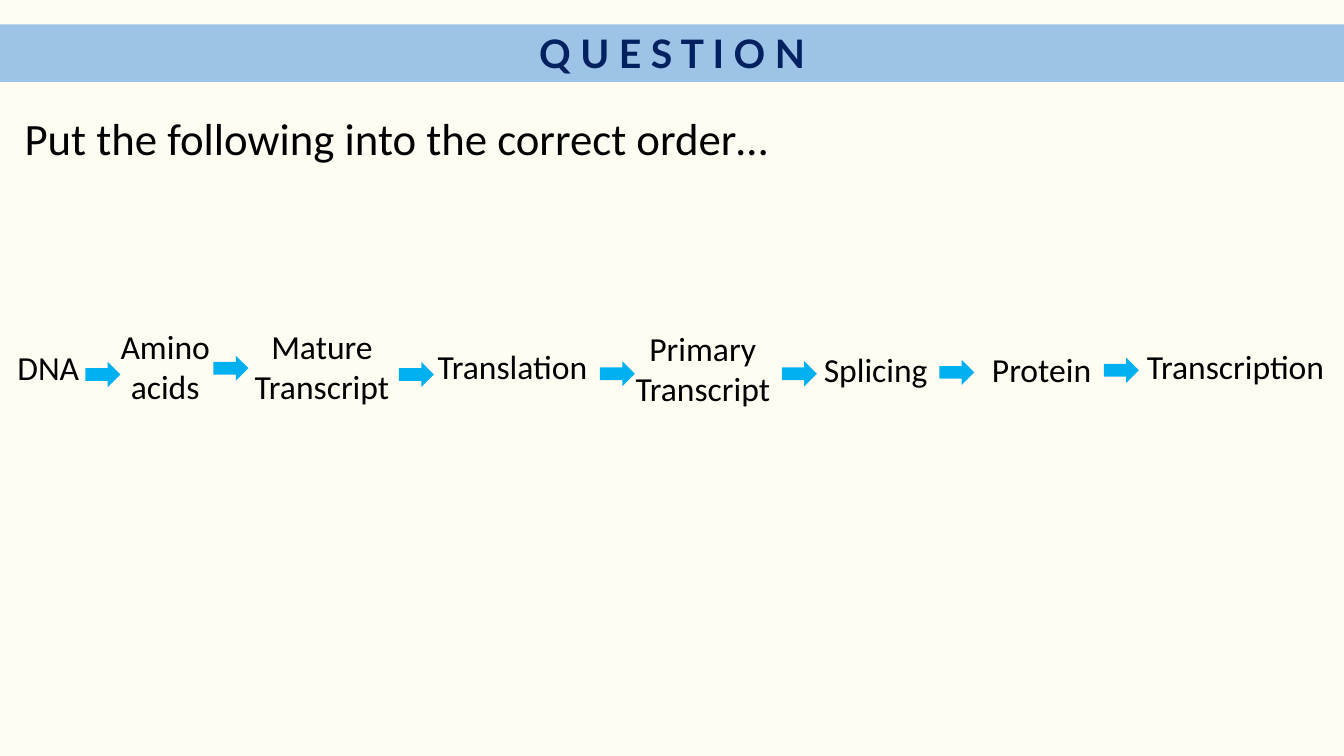
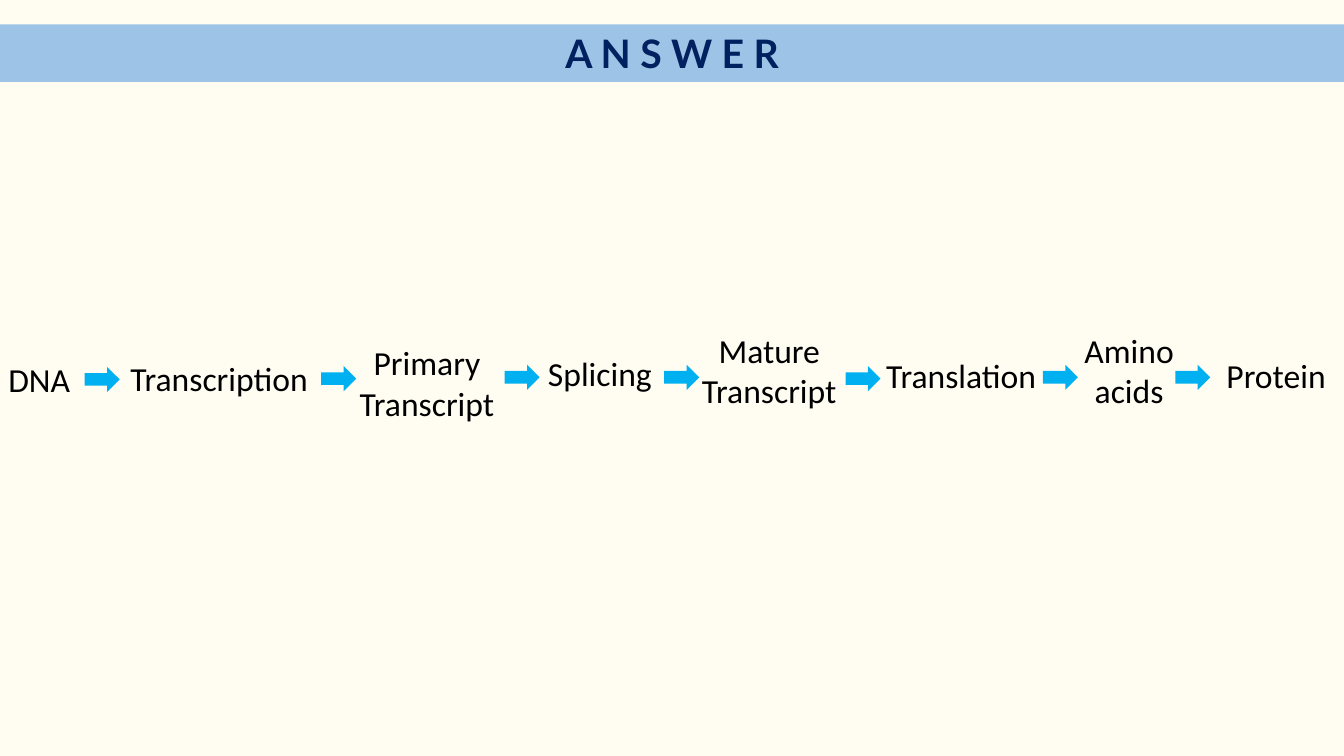
import pptx
import pptx.dml.color
import pptx.enum.shapes
import pptx.enum.text
import pptx.util

Pt = pptx.util.Pt
SHAPES = pptx.enum.shapes.MSO_SHAPE
ALIGN = pptx.enum.text.PP_ALIGN

SLIDE_WIDTH, SLIDE_HEIGHT = 960, 540

# Box width and height of each term
TERM_SIZES = {
    "DNA": (66, 36),
    "Amino acids": (118, 65.5),
    "Mature Transcript": (144.5, 65.5),
    "Primary Transcript": (159, 65.5),
    "Translation": (159, 36),
    "Transcription": (159, 36),
    "Splicing": (118, 36),
    "Protein": (118, 36),
}

# Each chain: terms as (text, centre, top), arrows as (left, top)
QUESTION_TERMS = [
    ("DNA", 34.5, 244), ("Amino acids", 118, 229),
    ("Mature Transcript", 230, 229), ("Translation", 366, 243.5),
    ("Primary Transcript", 502, 230.5), ("Splicing", 625.5, 245.5),
    ("Protein", 744, 245.5), ("Transcription", 882.5, 243.5),
]
QUESTION_ARROWS = [
    (61, 258.5), (152.5, 254), (285, 258.5), (428.5, 258),
    (558.5, 258), (671, 257), (788.5, 255.5),
]
ANSWER_TERMS = [
    ("DNA", 28, 252.5), ("Transcription", 156.5, 252),
    ("Primary Transcript", 305, 241), ("Splicing", 428.5, 248.5),
    ("Mature Transcript", 549.5, 232), ("Translation", 686.5, 250),
    ("Amino acids", 806.5, 232), ("Protein", 911.5, 250),
]
ANSWER_ARROWS = [
    (60.5, 262), (229.5, 261.5), (360.5, 260.5), (474.5, 260.5),
    (604, 261.5), (745, 260.5), (839.5, 260.5),
]


def color(hex_string):
    return pptx.dml.color.RGBColor.from_string(hex_string)


class Deck:
    BACKGROUND, BAND, TITLE = "FFFDF2", "9DC3E6", "002060"
    TEXT, ARROW = "000000", "00B0F0"
    TITLE_FONT, BODY_FONT = "Lato", "Calibri"

    def __init__(self):
        self.presentation = pptx.Presentation()
        self.presentation.slide_width = Pt(SLIDE_WIDTH)
        self.presentation.slide_height = Pt(SLIDE_HEIGHT)
        fill = self.presentation.slide_master.background.fill
        fill.solid()
        fill.fore_color.rgb = color(self.BACKGROUND)
        self.slide = None

    def add_slide(self, title):
        layout = self.presentation.slide_layouts[6]
        self.slide = self.presentation.slides.add_slide(layout)
        band = self.add_shape(SHAPES.RECTANGLE, 0, 17.5, SLIDE_WIDTH, 41, self.BAND)
        band.text_frame.vertical_anchor = pptx.enum.text.MSO_ANCHOR.MIDDLE
        self.set_text(band, title, 28, self.TITLE_FONT, self.TITLE, ALIGN.CENTER, bold=True)

    def add_shape(self, kind, left, top, width, height, fill):
        shape = self.slide.shapes.add_shape(kind, Pt(left), Pt(top), Pt(width), Pt(height))
        shape.shadow.inherit = False
        shape.fill.solid()
        shape.fill.fore_color.rgb = color(fill)
        shape.line.fill.background()
        return shape

    def set_text(self, shape, text, size, font_name, text_color, alignment, bold=False):
        paragraph = shape.text_frame.paragraphs[0]
        paragraph.text = text
        paragraph.alignment = alignment
        font = paragraph.font
        font.size, font.name, font.bold = Pt(size), font_name, bold
        font.color.rgb = color(text_color)

    def add_text(self, text, left, top, width, height, size, alignment):
        box = self.slide.shapes.add_textbox(Pt(left), Pt(top), Pt(width), Pt(height))
        box.text_frame.word_wrap = True
        box.text_frame.auto_size = pptx.enum.text.MSO_AUTO_SIZE.SHAPE_TO_FIT_TEXT
        self.set_text(box, text, size, self.BODY_FONT, self.TEXT, alignment)

    def add_chain(self, terms, arrows):
        for text, center, top in terms:
            width, height = TERM_SIZES[text]
            self.add_text(text, center - width / 2, top, width, height, 24, ALIGN.CENTER)
        for left, top in arrows:
            self.add_shape(SHAPES.RIGHT_ARROW, left, top, 25, 18, self.ARROW)


def main():
    deck = Deck()

    # Question: terms in a shuffled order
    deck.add_slide("Q U E S T I O N")
    deck.add_text("Put the following into the correct order…",
                  10.5, 75.5, 674, 46, 32, ALIGN.LEFT)
    deck.add_chain(QUESTION_TERMS, QUESTION_ARROWS)

    # Answer: terms in the correct order
    deck.add_slide("A N S W E R")
    deck.add_chain(ANSWER_TERMS, ANSWER_ARROWS)

    deck.presentation.save("out.pptx")


if __name__ == "__main__":
    main()
